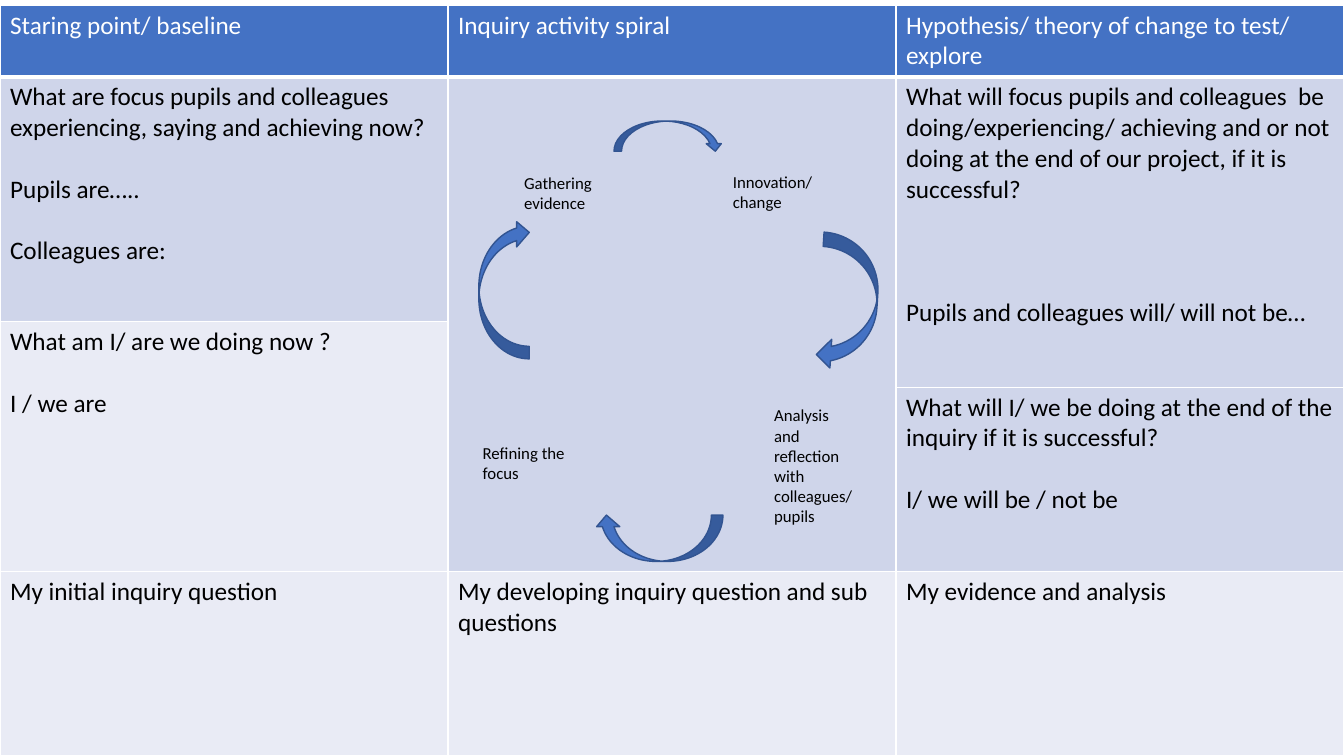
import dataclasses

import lxml.etree
import pptx
import pptx.dml.color
import pptx.enum.shapes
import pptx.oxml.ns
import pptx.util


@dataclasses.dataclass(frozen=True)
class Theme:
    font: str = "Calibri"
    table_size: int = 18
    label_size: int = 12
    line_height: float = 22
    accent: str = "4472C4"
    outline: str = "325491"
    band: str = "CFD5EA"
    pale: str = "E9EBF5"
    white: str = "FFFFFF"
    black: str = "000000"


THEME = Theme()
PAGE_WIDTH = pptx.util.Inches(13.33)
PAGE_HEIGHT = pptx.util.Inches(7.5)
SHAPE = pptx.enum.shapes.MSO_SHAPE

TABLE_TOP = 0.67
ROW_SHARES = (9.47, 32.4, 8.67, 24.4, 24.4)
COLUMN_COUNT = 3

HEADINGS = (
    "Staring point/ baseline",
    "Inquiry activity spiral",
    "Hypothesis/ theory of change to test/ explore",
)
QUESTIONS = (
    "My initial inquiry question",
    "My developing inquiry question and sub questions",
    "My evidence and analysis",
)
BODY_CELLS = (
    (1, 0, 1, THEME.band, (
        (0, "What are focus pupils and colleagues  experiencing, saying and achieving now?"),
        (1, "Pupils are….."),
        (1, "Colleagues are:"),
    )),
    (1, 1, 3, THEME.band, ()),
    (1, 2, 2, THEME.band, (
        (0, "What will focus pupils and colleagues  be doing/experiencing/ achieving "
            "and or not doing at the end of our project, if it is successful?"),
        (3, "Pupils and colleagues will/ will not be…"),
    )),
    (2, 0, 2, THEME.pale, (
        (0, "What am I/ are we doing now ?"),
        (1, "I / we are"),
    )),
    (3, 2, 1, THEME.band, (
        (0, "What will I/ we be doing at the end of the inquiry if it is successful?"),
        (1, "I/ we will be / not be"),
    )),
)
SPIRAL_ARROWS = (
    (SHAPE.CURVED_LEFT_ARROW, (48.61, 10.8, 2.25, 14.4), 270),
    (SHAPE.CURVED_LEFT_ARROW, (60.99, 30.93, 4.28, 18.13), 3.6),
    (SHAPE.CURVED_LEFT_ARROW, (35.63, 29.07, 3.75, 18.4), 180),
    (SHAPE.CURVED_DOWN_ARROW, (44.26, 68.13, 9.53, 6.13), 180),
)
SPIRAL_LABELS = (
    ("Gathering evidence", (38.26, 22.13, 7.65, 6.67)),
    ("Innovation/ change", (53.79, 22, 7.65, 6.67)),
    ("Analysis and reflection with colleagues/ pupils", (56.86, 52.93, 7.65, 17.47)),
    ("Refining the focus", (35.18, 57.87, 8.4, 6.67)),
)


def rgb(value):
    return pptx.dml.color.RGBColor.from_string(value)


def across(share):
    return round(PAGE_WIDTH * share / 100)


def down(share):
    return round(PAGE_HEIGHT * share / 100)


def place(shares):
    left, top, width, height = shares
    return across(left), down(top), across(width), down(height)


def add_span(para, text, size, color):
    span = para.add_run()
    span.text = text
    span.font.name = THEME.font
    span.font.size = pptx.util.Pt(size)
    span.font.color.rgb = rgb(color)


def write_cell(cell, lines, color):
    for index, (gap, text) in enumerate(lines):
        frame = cell.text_frame
        para = frame.add_paragraph() if index else frame.paragraphs[0]
        if gap:
            para.space_before = pptx.util.Pt(gap * THEME.line_height)
        add_span(para, text, THEME.table_size, color)


def paint_cell(cell, fill, bottom_width=1):
    properties = cell._tc.get_or_add_tcPr()
    for side, width in (("L", 1), ("R", 1), ("T", 1), ("B", bottom_width)):
        border = lxml.etree.SubElement(
            properties, pptx.oxml.ns.qn(f"a:ln{side}"), w=str(pptx.util.Pt(width)))
        solid = lxml.etree.SubElement(border, pptx.oxml.ns.qn("a:solidFill"))
        lxml.etree.SubElement(solid, pptx.oxml.ns.qn("a:srgbClr"), val=THEME.white)
    cell.fill.solid()
    cell.fill.fore_color.rgb = rgb(fill)


def add_inquiry_table(page):
    area = place((0, TABLE_TOP, 100, sum(ROW_SHARES)))
    table = page.shapes.add_table(len(ROW_SHARES), COLUMN_COUNT, *area).table
    for row, share in zip(table.rows, ROW_SHARES):
        row.height = down(share)
    for column in table.columns:
        column.width = across(100 / COLUMN_COUNT)

    last_row = len(ROW_SHARES) - 1
    for column, (heading, question) in enumerate(zip(HEADINGS, QUESTIONS)):
        header, footer = table.cell(0, column), table.cell(last_row, column)
        paint_cell(header, THEME.accent, bottom_width=3)
        write_cell(header, [(0, heading)], THEME.white)
        paint_cell(footer, THEME.pale)
        write_cell(footer, [(0, question)], THEME.black)

    for row, column, height, fill, lines in BODY_CELLS:
        for offset in range(height):
            paint_cell(table.cell(row + offset, column), fill)
        cell = table.cell(row, column)
        if height > 1:
            cell.merge(table.cell(row + height - 1, column))
        write_cell(cell, lines, THEME.black)


def add_arrow(page, kind, shares, rotation):
    arrow = page.shapes.add_shape(kind, *place(shares))
    arrow.rotation = rotation
    arrow.shadow.inherit = False
    arrow.fill.solid()
    arrow.fill.fore_color.rgb = rgb(THEME.accent)
    arrow.line.color.rgb = rgb(THEME.outline)
    arrow.line.width = pptx.util.Pt(1)


def add_label(page, text, shares):
    box = page.shapes.add_textbox(*place(shares))
    box.text_frame.word_wrap = True
    add_span(box.text_frame.paragraphs[0], text, THEME.label_size, THEME.black)


def main():
    deck = pptx.Presentation()
    deck.slide_width = PAGE_WIDTH
    deck.slide_height = PAGE_HEIGHT
    page = deck.slides.add_slide(deck.slide_layouts[6])
    add_inquiry_table(page)
    for kind, shares, rotation in SPIRAL_ARROWS:
        add_arrow(page, kind, shares, rotation)
    for text, shares in SPIRAL_LABELS:
        add_label(page, text, shares)
    deck.save("out.pptx")


if __name__ == "__main__":
    main()
